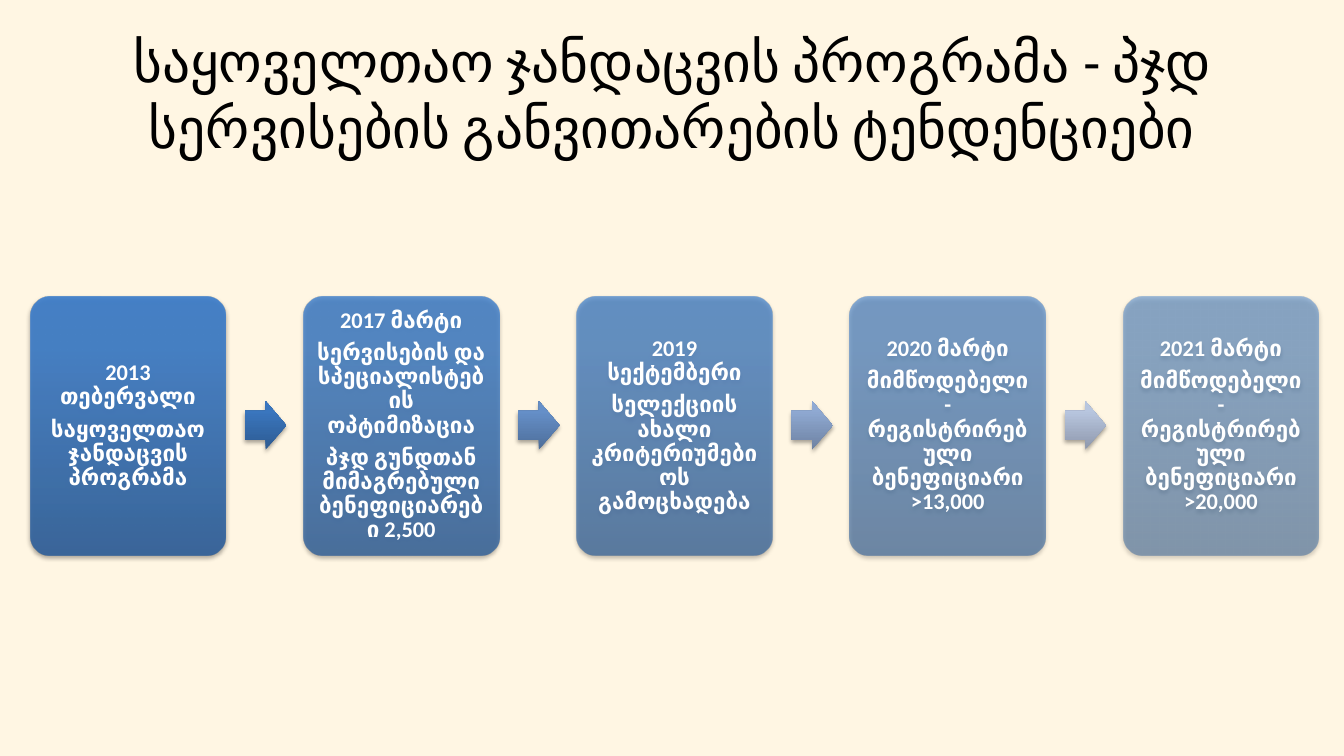
from dataclasses import dataclass

from lxml import etree
from pptx import Presentation
from pptx import util as u
from pptx.dml.color import RGBColor
from pptx.enum import shapes, text
from pptx.oxml import ns
from pptx.shapes.autoshape import Shape
from pptx.slide import Slide

FONT = "Calibri"
BLACK = RGBColor(0x00, 0x00, 0x00)
WHITE = RGBColor(0xFF, 0xFF, 0xFF)
CREAM = RGBColor(0xFF, 0xF6, 0xE3)

STOPS = (0, 80, 100)
CARD_COLORS = (
    RGBColor(0x2F, 0x5F, 0x99),
    RGBColor(0x3D, 0x7C, 0xC7),
    RGBColor(0x3A, 0x7C, 0xCB),
)
ARROW_COLORS = (
    (RGBColor(0x2D, 0x5B, 0x92), RGBColor(0x3A, 0x76, 0xBE), RGBColor(0x38, 0x76, 0xC2)),
    (RGBColor(0x4E, 0x6E, 0x9A), RGBColor(0x65, 0x8F, 0xC8), RGBColor(0x64, 0x8F, 0xCA)),
    (RGBColor(0x6E, 0x82, 0xA2), RGBColor(0x8F, 0xA9, 0xD2), RGBColor(0x8F, 0xAA, 0xD5)),
    (RGBColor(0x8E, 0x98, 0xAC), RGBColor(0xB8, 0xC6, 0xDF), RGBColor(0xB8, 0xC6, 0xE1)),
)

CARD_LEFT, CARD_TOP, CARD_WIDTH, CARD_HEIGHT = 0.3, 2.94, 1.94, 2.57
ARROW_LEFT, ARROW_TOP, ARROW_WIDTH, ARROW_HEIGHT = 2.43, 3.98, 0.41, 0.48
STEP_PITCH = 2.71

TITLE = "საყოველთაო ჯანდაცვის პროგრამა - პჯდ სერვისების განვითარების ტენდენციები"


@dataclass(frozen=True)
class Milestone:
    date: str
    details: tuple[str, ...]
    opacity: int


MILESTONES = (
    Milestone("2013 თებერვალი", ("საყოველთაო ჯანდაცვის პროგრამა",), 90),
    Milestone(
        "2017 მარტი",
        (
            "სერვისების და სპეციალისტების ოპტიმიზაცია",
            "პჯდ გუნდთან მიმაგრებული ბენეფიციარები 2,500",
        ),
        80,
    ),
    Milestone("2019 სექტემბერი", ("სელექციის ახალი კრიტერიუმებიოს გამოცხადება",), 70),
    Milestone("2020 მარტი", ("მიმწოდებელი - რეგისტრირებული ბენეფიციარი >13,000",), 60),
    Milestone("2021 მარტი", ("მიმწოდებელი - რეგისტრირებული ბენეფიციარი >20,000",), 50),
)


def add_color(parent: etree._Element, color: RGBColor, opacity: int) -> None:
    element = etree.SubElement(parent, ns.qn("a:srgbClr"), val=str(color))
    if opacity < 100:
        etree.SubElement(element, ns.qn("a:alpha"), val=str(opacity * 1000))


def style_shape(shape: Shape, colors: tuple[RGBColor, ...], opacity: int = 100) -> None:
    """Apply an upward gradient, no outline and a soft shadow below."""
    shape.fill.gradient()
    shape.fill.gradient_angle = 90
    shape.line.fill.background()
    shape.shadow.inherit = False

    properties = shape._element.spPr
    stop_list = properties.find(f"{ns.qn('a:gradFill')}/{ns.qn('a:gsLst')}")
    for stop in list(stop_list):
        stop_list.remove(stop)
    for position, color in zip(STOPS, colors):
        stop = etree.SubElement(stop_list, ns.qn("a:gs"), pos=str(position * 1000))
        add_color(stop, color, opacity)

    shadow = etree.SubElement(
        properties.find(ns.qn("a:effectLst")),
        ns.qn("a:outerShdw"),
        blurRad=str(u.Pt(3.1)),
        dist=str(u.Pt(1.8)),
        dir="5400000",
        rotWithShape="0",
    )
    add_color(shadow, BLACK, 35)


def add_title(slide: Slide) -> None:
    title = slide.shapes.title
    title.left, title.top = u.Inches(0.67), u.Inches(0.3)
    title.width, title.height = u.Inches(12), u.Inches(1.25)
    frame = title.text_frame
    frame.text = TITLE
    frame.word_wrap = True
    frame.auto_size = text.MSO_AUTO_SIZE.NONE
    frame.vertical_anchor = text.MSO_ANCHOR.MIDDLE
    paragraph = frame.paragraphs[0]
    paragraph.alignment = text.PP_ALIGN.CENTER
    font = paragraph.runs[0].font
    font.name, font.size, font.color.rgb = FONT, u.Pt(39.6), BLACK


def add_card(slide: Slide, index: int, milestone: Milestone) -> None:
    card = slide.shapes.add_shape(
        shapes.MSO_SHAPE.ROUNDED_RECTANGLE,
        u.Inches(CARD_LEFT + index * STEP_PITCH),
        u.Inches(CARD_TOP),
        u.Inches(CARD_WIDTH),
        u.Inches(CARD_HEIGHT),
    )
    card.adjustments[0] = 0.1
    style_shape(card, CARD_COLORS, milestone.opacity)

    frame = card.text_frame
    frame.text = "\n".join((milestone.date, *milestone.details))
    frame.word_wrap = True
    frame.vertical_anchor = text.MSO_ANCHOR.MIDDLE
    frame.margin_left = frame.margin_right = u.Inches(0.07)
    frame.margin_top = frame.margin_bottom = u.Inches(0.07)
    for paragraph in frame.paragraphs:
        paragraph.alignment = text.PP_ALIGN.CENTER
        paragraph.line_spacing = 0.9
        paragraph.space_after = u.Pt(5.6)
        font = paragraph.runs[0].font
        font.name, font.size, font.bold = FONT, u.Pt(16), True
        font.color.rgb = WHITE


def add_arrow(slide: Slide, index: int, colors: tuple[RGBColor, ...]) -> None:
    arrow = slide.shapes.add_shape(
        shapes.MSO_SHAPE.RIGHT_ARROW,
        u.Inches(ARROW_LEFT + index * STEP_PITCH),
        u.Inches(ARROW_TOP),
        u.Inches(ARROW_WIDTH),
        u.Inches(ARROW_HEIGHT),
    )
    arrow.adjustments[0] = 0.6
    arrow.adjustments[1] = 0.5
    style_shape(arrow, colors)


def main() -> None:
    presentation = Presentation()
    presentation.slide_width = u.Inches(13.33)
    presentation.slide_height = u.Inches(7.5)
    slide = presentation.slides.add_slide(presentation.slide_layouts.get_by_name("Title Only"))
    slide.background.fill.solid()
    slide.background.fill.fore_color.rgb = CREAM

    add_title(slide)
    for index, milestone in enumerate(MILESTONES):
        add_card(slide, index, milestone)
        if index < len(ARROW_COLORS):
            add_arrow(slide, index, ARROW_COLORS[index])
    presentation.save("out.pptx")


if __name__ == "__main__":
    main()
